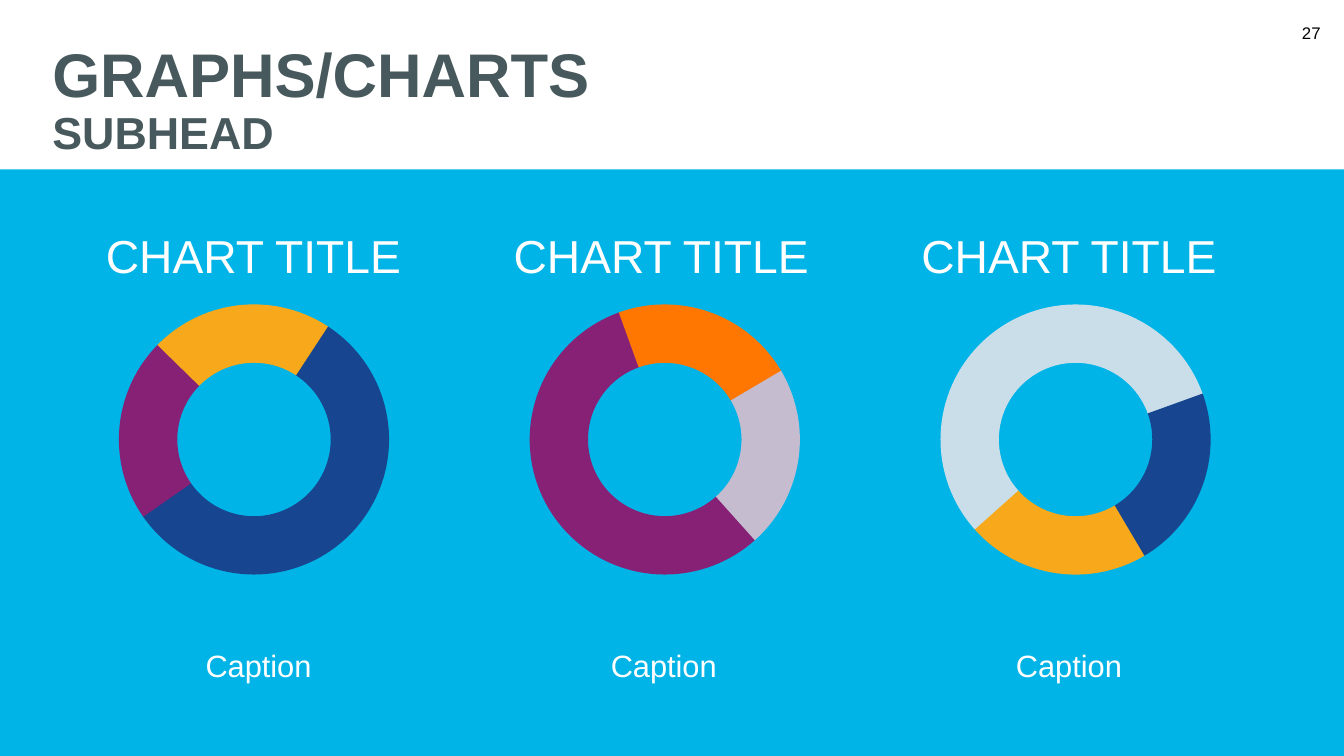
from dataclasses import dataclass

from pptx import Presentation
from pptx.dml.color import RGBColor
from pptx.enum.shapes import MSO_SHAPE
from pptx.enum.text import MSO_ANCHOR, PP_ALIGN
from pptx.slide import Slide
from pptx.text.text import TextFrame
from pptx.util import Inches, Pt

RECT, ARC = MSO_SHAPE.RECTANGLE, MSO_SHAPE.BLOCK_ARC
TOP, MID, LOW = MSO_ANCHOR.TOP, MSO_ANCHOR.MIDDLE, MSO_ANCHOR.BOTTOM
LEFT, MIDST, RIGHT = PP_ALIGN.LEFT, PP_ALIGN.CENTER, PP_ALIGN.RIGHT

# Grid of 160 columns by 90 rows
WIDE, HIGH = Inches(13.33), Inches(7.5)
COLS, ROWS = 160, 90


@dataclass(frozen=True)
class Theme:
    face: str = "Arial"
    sky: str = "01B4E7"
    slate: str = "48595D"
    white: str = "FFFFFF"
    black: str = "000000"
    navy: str = "17458F"
    plum: str = "872175"
    gold: str = "F7A81B"
    flame: str = "FF7600"
    lilac: str = "C6BCD0"
    mist: str = "C9DEE9"
    head: int = 44
    sub: int = 32
    title: int = 33
    note: int = 22
    page: int = 12


@dataclass(frozen=True)
class Box:
    col: float
    row: float
    wide: float
    high: float

    def shift(self, step: float) -> "Box":
        return Box(self.col + step, self.row, self.wide, self.high)

    def place(self) -> tuple[int, int, int, int]:
        return (int(self.col * WIDE / COLS), int(self.row * HIGH / ROWS),
                int(self.wide * WIDE / COLS), int(self.high * HIGH / ROWS))


@dataclass(frozen=True)
class Ring:
    title: str
    note: str
    turn: float
    hues: tuple[str, str, str]


THEME = Theme()
BAND = Box(0, 20.16, 160, 69.84)
PAGE = Box(152.9, 1.56, 5.5, 4.8)
HEAD = Box(5.04, 0, 150.96, 20.16)

# First column's boxes, and the step to the next column
TITLE, TITLE_STEP = Box(8.04, 26.52, 44.28, 7.92), 48.54
RING, RING_STEP = Box(14.16, 36.24, 32.16, 32.16), 48.9
NOTE, NOTE_STEP = Box(8.64, 68.4, 44.28, 21.6), 48.24

# Start and end of each slice in degrees, clockwise from the right
SLICES = ((302.8, 145.4), (145.1, 224.6), (224.4, 303.2))
THICK = 0.216
DEGREE = 0.6  # adjustment units per degree

RINGS = (
    Ring("CHART TITLE", "Caption", 0, (THEME.navy, THEME.plum, THEME.gold)),
    Ring("CHART TITLE", "Caption", 105, (THEME.plum, THEME.flame, THEME.lilac)),
    Ring("CHART TITLE", "Caption", 195, (THEME.mist, THEME.navy, THEME.gold)),
)


def paint(shape, hue: str) -> None:
    shape.shadow.inherit = False
    shape.fill.solid()
    shape.fill.fore_color.rgb = RGBColor.from_string(hue)
    shape.line.fill.background()


def write(slide: Slide, box: Box, text: str, size: int, hue: str,
          align: PP_ALIGN, anchor: MSO_ANCHOR) -> TextFrame:
    frame = slide.shapes.add_textbox(*box.place()).text_frame
    frame.word_wrap = True
    frame.vertical_anchor = anchor
    line = frame.paragraphs[0]
    line.text = text
    line.alignment = align
    line.font.name = THEME.face
    line.font.size = Pt(size)
    line.font.color.rgb = RGBColor.from_string(hue)
    return frame


def draw_head(slide: Slide) -> None:
    frame = write(slide, HEAD, "GRAPHS/CHARTS", THEME.head, THEME.slate, LEFT, LOW)
    frame.margin_top, frame.margin_bottom = 0, Inches(0.1)
    line = frame.paragraphs[0]
    line.line_spacing = 0.9
    line.font.bold = True
    line.add_line_break()
    sub = line.add_run()
    sub.text = "SUBHEAD"
    sub.font.size = Pt(THEME.sub)


def draw_ring(slide: Slide, ring: Ring, box: Box) -> None:
    group = slide.shapes.add_group_shape()
    for (start, end), hue in zip(SLICES, ring.hues):
        arc = group.shapes.add_shape(ARC, *box.place())
        arc.adjustments[0] = start * DEGREE
        arc.adjustments[1] = end * DEGREE
        arc.adjustments[2] = THICK
        arc.rotation = ring.turn
        paint(arc, hue)


def main() -> None:
    deck = Presentation()
    deck.slide_width, deck.slide_height = WIDE, HIGH
    slide = deck.slides.add_slide(deck.slide_layouts[6])

    # Band, page number and heading
    paint(slide.shapes.add_shape(RECT, *BAND.place()), THEME.sky)
    write(slide, PAGE, "27", THEME.page, THEME.black, RIGHT, MID)
    draw_head(slide)

    # One ring with title and caption per column
    for i, ring in enumerate(RINGS):
        draw_ring(slide, ring, RING.shift(i * RING_STEP))
        write(slide, TITLE.shift(i * TITLE_STEP), ring.title,
              THEME.title, THEME.white, MIDST, TOP)
        write(slide, NOTE.shift(i * NOTE_STEP), ring.note,
              THEME.note, THEME.white, MIDST, MID)

    deck.save("out.pptx")


if __name__ == "__main__":
    main()
